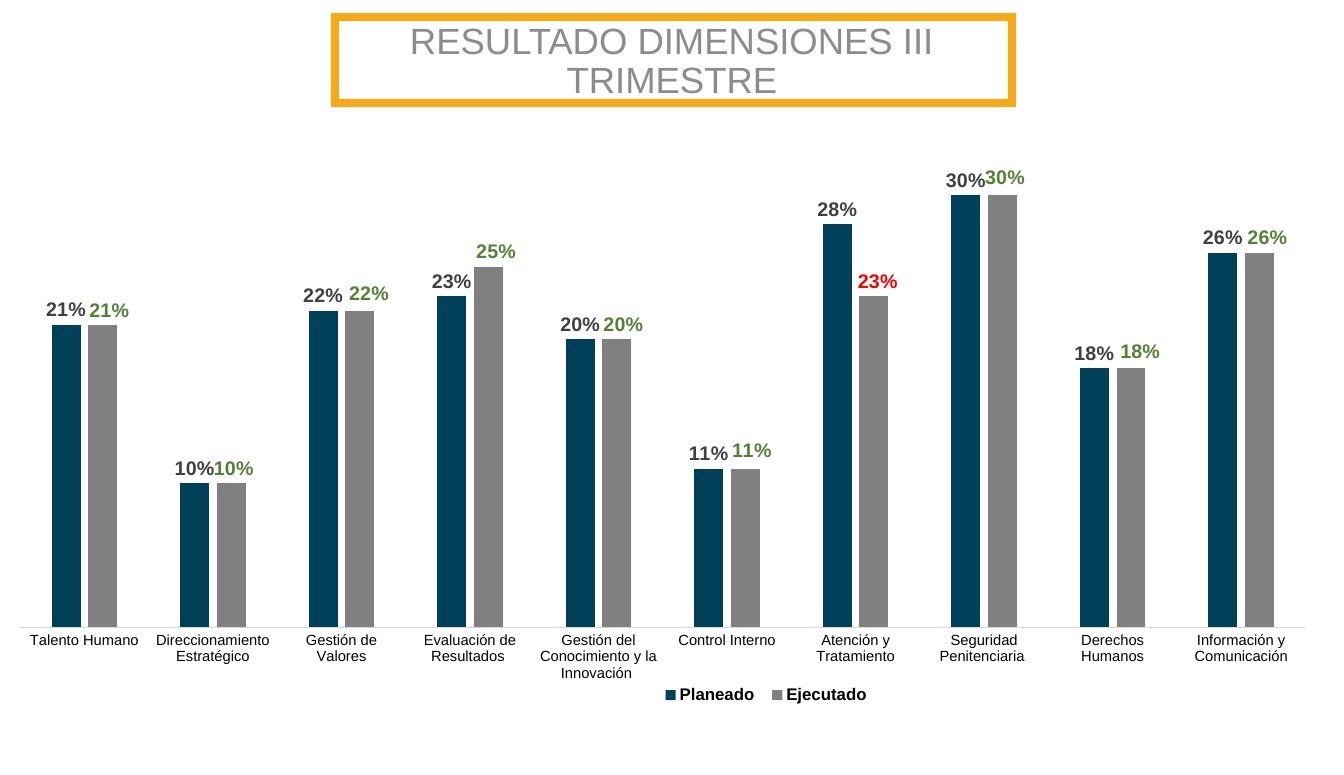
"""Build the slide comparing planned and executed results by dimension."""
from lxml import etree
from pptx import Presentation
from pptx import util as u
from pptx.chart.data import CategoryChartData
from pptx.dml.color import RGBColor
from pptx.enum import chart as charts, shapes, text
from pptx.oxml import ns

AMBER = RGBColor(0xF8, 0xA9, 0x13)
TITLE_GRAY = RGBColor(0x8C, 0x8C, 0x8C)
AXIS_GRAY = RGBColor(0xD9, 0xD9, 0xD9)
DARK_GRAY = RGBColor(0x40, 0x40, 0x40)
BAR_GRAY = RGBColor(0x80, 0x80, 0x80)
NAVY = RGBColor(0x00, 0x41, 0x5A)
GREEN = RGBColor(0x54, 0x82, 0x35)
RED = RGBColor(0xFF, 0x00, 0x00)
BLACK = RGBColor(0, 0, 0)

ROWS = [
    ("Talento Humano", 0.21, 0.21, (0.005, 0.001)),
    ("Direccionamiento Estratégico", 0.10, 0.10, (0.002, 0)),
    ("Gestión de Valores", 0.22, 0.22, (0.007, -0.004)),
    ("Evaluación de Resultados ", 0.23, 0.25, (0.006, -0.002)),
    ("Gestión del Conocimiento y la Innovación ", 0.20, 0.20, (0.005, 0)),
    ("Control Interno", 0.11, 0.11, (0.005, -0.005)),
    ("Atención y Tratamiento", 0.28, 0.23, (0.003, 0)),
    ("Seguridad Penitenciaria ", 0.30, 0.30, (0.002, -0.005)),
    ("Derechos Humanos", 0.18, 0.18, (0.007, -0.002)),
    ("Información y Comunicación", 0.26, 0.26, (0.006, 0)),
]


def set_font(font, size, color, bold=False):
    font.name = "Arial"
    font.size = u.Pt(size)
    font.bold = bold
    font.color.rgb = color


def place(element, after, **settings):
    for old in element.findall(ns.qn("c:layout")):
        element.remove(old)
    layout = etree.Element(ns.qn("c:layout"))
    manual = etree.SubElement(layout, ns.qn("c:manualLayout"))
    for name, value in settings.items():
        etree.SubElement(manual, ns.qn(f"c:{name}")).set("val", str(value))
    if after is None:
        element.insert(0, layout)
    else:
        element.find(ns.qn(after)).addnext(layout)


deck = Presentation()
deck.slide_width = u.Cm(33.8)
deck.slide_height = u.Cm(19.5)
page = deck.slides.add_slide(deck.slide_layouts[5])

frame = page.shapes.add_shape(
    shapes.MSO_SHAPE.RECTANGLE, u.Inches(3.32), u.Inches(0.17), u.Inches(6.7), u.Inches(0.85))
frame.shadow.inherit = False
frame.fill.background()
frame.line.color.rgb = AMBER
frame.line.width = u.Pt(6)
outline = frame._element.spPr.find(ns.qn("a:ln"))
etree.SubElement(outline, ns.qn("a:miter")).set("lim", "800000")

data = CategoryChartData(number_format="0%")
data.categories = [row[0] for row in ROWS]
data.add_series("Planeado", [row[1] for row in ROWS])
data.add_series("Ejecutado", [row[2] for row in ROWS])
chart = page.shapes.add_chart(
    charts.XL_CHART_TYPE.COLUMN_CLUSTERED, u.Inches(-0.01), u.Inches(1.08),
    u.Inches(13.12), u.Inches(5.98), data).chart
chart.has_title = False
chart.font.name = "Roboto"
chart.font.size = u.Pt(9)
chart.font.color.rgb = BLACK

dimensions = chart.category_axis
dimensions.major_tick_mark = charts.XL_TICK_MARK.NONE
dimensions.format.line.color.rgb = AXIS_GRAY
dimensions.format.line.width = u.Pt(0.75)
set_font(dimensions.tick_labels.font, 10.5, BLACK)

shares = chart.value_axis
shares.visible = False
shares.has_major_gridlines = False
shares.minimum_scale, shares.maximum_scale = 0, 0.35
shares.tick_labels.number_format = "0%"
shares.tick_labels.number_format_is_linked = False

chart.has_legend = True
legend = chart.legend
legend.position = charts.XL_LEGEND_POSITION.BOTTOM
legend.include_in_layout = False
set_font(legend.font, 12, BLACK, True)

bars = chart.plots[0]
bars.vary_by_categories = False
bars.gap_width, bars.overlap = 219, -27
for series, fill, label_color in zip(bars.series, (NAVY, BAR_GRAY), (DARK_GRAY, GREEN)):
    series.format.fill.solid()
    series.format.fill.fore_color.rgb = fill
    labels = series.data_labels
    labels.show_value = True
    labels.number_format = "0%"
    labels.number_format_is_linked = False
    labels.position = charts.XL_LABEL_POSITION.OUTSIDE_END
    set_font(labels.font, 14, label_color, True)

executed = bars.series[1]
for index, (_, planned, done, _) in enumerate(ROWS):
    label = executed.points[index].data_label
    set_font(label.font, 14, RED if done < planned else GREEN, True)
    label.position = charts.XL_LABEL_POSITION.OUTSIDE_END
for element, row in zip(executed.data_labels._element.findall(ns.qn("c:dLbl")), ROWS):
    place(element, "c:idx", x=row[3][0], y=row[3][1])

plot_area = chart._chartSpace.find(".//" + ns.qn("c:plotArea"))
place(plot_area, None, layoutTarget="inner", xMode="edge", yMode="edge",
      x=0.016, y=0.024, w=0.97, h=0.835)
place(legend._element, "c:legendPos", xMode="edge", yMode="edge",
      x=0.494, y=0.946, w=0.17, h=0.05)

title = page.shapes.title
title.left, title.top = u.Inches(3.35), u.Inches(0.22)
title.width, title.height = u.Inches(6.61), u.Inches(0.79)
title.text_frame.text = "RESULTADO DIMENSIONES III TRIMESTRE"
title.text_frame.word_wrap = True
title.text_frame.auto_size = text.MSO_AUTO_SIZE.NONE
title.text_frame.vertical_anchor = text.MSO_ANCHOR.MIDDLE
para = title.text_frame.paragraphs[0]
para.alignment = text.PP_ALIGN.CENTER
para.line_spacing = 0.9
set_font(para.font, 26, TITLE_GRAY)

deck.save("out.pptx")
